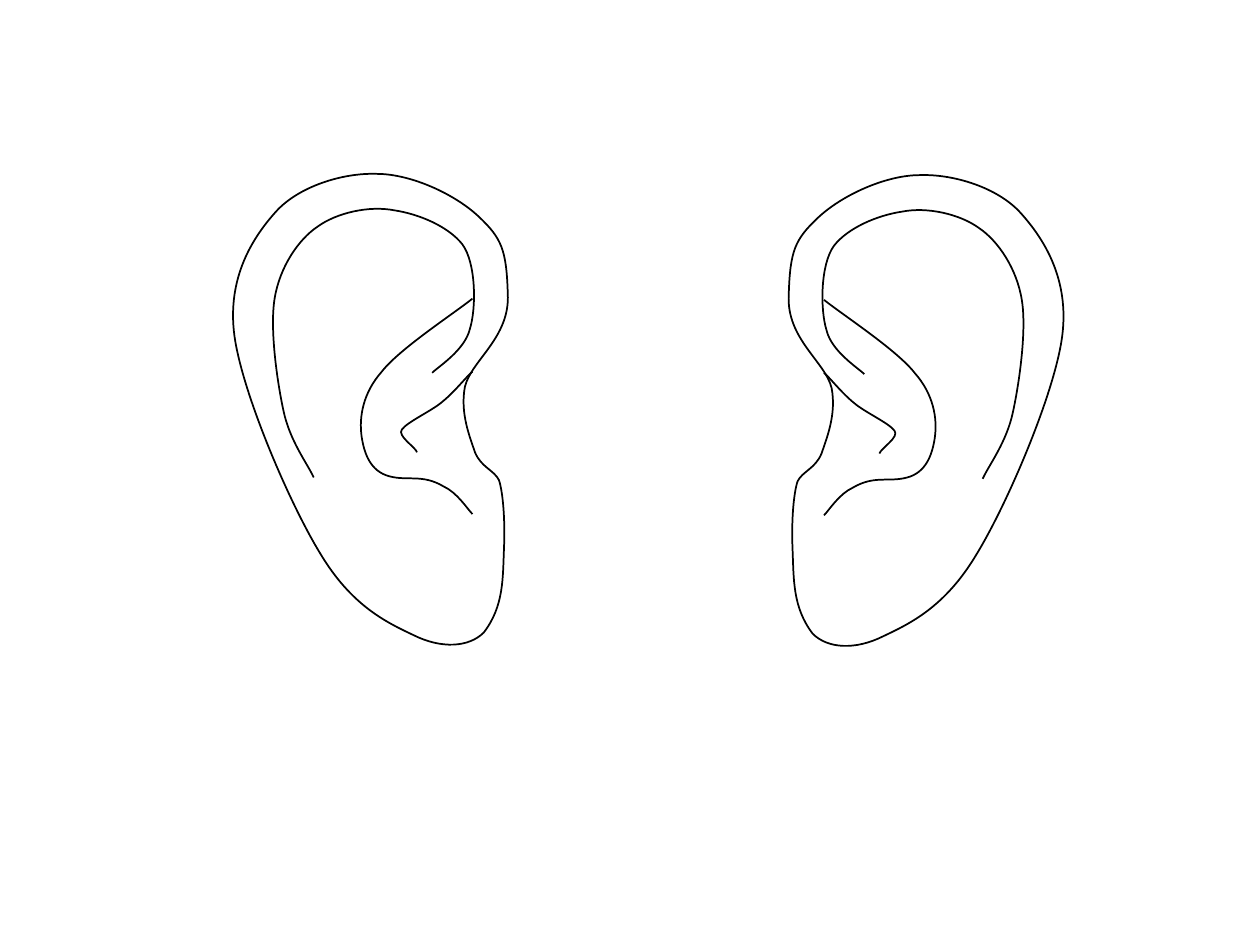
from lxml.etree import SubElement
from pptx import Presentation
from pptx.dml.color import RGBColor
from pptx.oxml.ns import qn
from pptx.util import Pt

COLORS = {"ink": "010101"}
UNIT = Pt(0.72)           # the grid of the ear curves: 100 units to the inch
MIRROR_X, RISE = 1029, 1  # left ear: x becomes MIRROR_X - x, y moves up by RISE

# Right ear: each curve is a start point, then three points per Bezier segment
OUTLINE = [
    (626, 234), (627, 199), (631, 190), (649, 173), (668, 155), (703, 139), (730, 139),
    (757, 138), (792, 149), (810, 169), (828, 189), (849, 221), (843, 267),
    (837, 312), (800, 399), (775, 440), (750, 482), (722, 495), (701, 505),
    (679, 516), (657, 515), (645, 503), (629, 482), (630, 460), (629, 436),
    (628, 412), (630, 391), (633, 382), (637, 374), (647, 372), (652, 360),
    (656, 348), (664, 329), (660, 308), (655, 287), (624, 269), (626, 234),
]
INNER_RIM = [
    (686, 297), (681, 292), (660, 279), (656, 262), (651, 246), (651, 210), (662, 195),
    (673, 181), (696, 171), (716, 168), (736, 164), (762, 170), (777, 181),
    (792, 191), (807, 213), (811, 238), (815, 262), (809, 304), (804, 327),
    (799, 351), (785, 369), (780, 380),
]
BOWL = [
    (654, 409), (658, 405), (666, 392), (677, 387), (694, 377), (705, 383), (720, 379),
    (735, 375), (740, 361), (742, 347), (744, 332), (741, 313), (726, 296),
    (712, 278), (669, 250), (654, 238),
]
FOLD = [
    (654, 296), (658, 299), (668, 312), (678, 320), (686, 327), (706, 336), (710, 342),
    (714, 347), (699, 356), (698, 360),
]
EAR = [(OUTLINE, True), (INNER_RIM, False), (BOWL, False), (FOLD, False)]


class Sketch:
    """Holds the line style and the slide being drawn."""

    line_format = {"width": Pt(1)}

    def __init__(self, slide):
        self.slide = slide

    def curve(self, points, closed):
        start, *rest = points
        builder = self.slide.shapes.build_freeform(*start, scale=UNIT)
        builder.add_line_segments(rest, close=closed)
        sp = builder.convert_to_shape()
        self.smooth(sp)
        sp.shadow.inherit = False
        sp.fill.background()
        sp.line.color.rgb = RGBColor.from_string(COLORS["ink"])
        for name, value in self.line_format.items():
            setattr(sp.line, name, value)
        return sp

    def smooth(self, sp):
        """Turn every three straight segments into one Bezier segment."""
        outline = next(sp.element.iter(qn("a:path")))
        segments = outline.findall(qn("a:lnTo"))
        for i in range(0, len(segments), 3):
            bezier = SubElement(outline, qn("a:cubicBezTo"))
            segments[i].addprevious(bezier)
            for segment in segments[i:i + 3]:
                bezier.append(segment[0])
                outline.remove(segment)

    def ear(self, mirrored=False):
        parts = []
        for points, closed in EAR:
            if mirrored:
                points = [(MIRROR_X - x, y - RISE) for x, y in points]
            parts.append(self.curve(points, closed))
        return self.slide.shapes.add_group_shape(parts)


def main():
    prs = Presentation()
    prs.slide_width, prs.slide_height = Pt(720), Pt(540)
    s = prs.slides.add_slide(prs.slide_layouts[6])
    sketch = Sketch(s)

    # Right ear, then its mirror on the left
    sketch.ear()
    sketch.ear(mirrored=True)

    prs.save("out.pptx")


if __name__ == "__main__":
    main()
